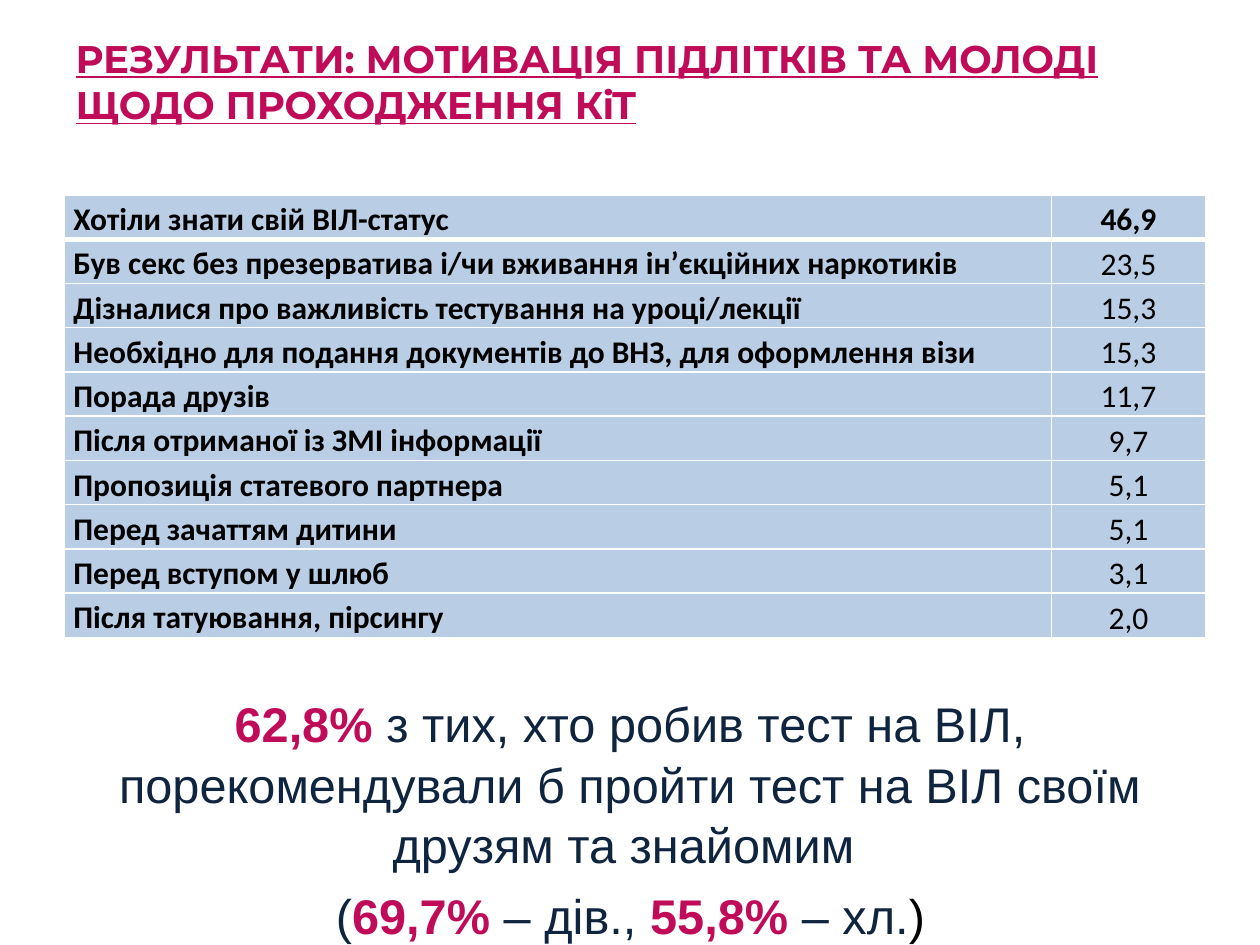
from lxml import etree
from pptx import Presentation
from pptx.dml.color import RGBColor
from pptx.enum import text
from pptx.oxml import ns
from pptx.util import Cm, Pt

PINK, NAVY, BLACK, WHITE, BLUE = "BF0B58", "0F243E", "000000", "FFFFFF", "B9CDE5"

TITLE = "РЕЗУЛЬТАТИ: МОТИВАЦІЯ ПІДЛІТКІВ ТА МОЛОДІ ЩОДО ПРОХОДЖЕННЯ КіТ"
MOTIVES = [
    ("Хотіли знати свій ВІЛ-статус", "46,9"),
    ("Був секс без презерватива і/чи вживання ін’єкційних наркотиків", "23,5"),
    ("Дізналися про важливість тестування на уроці/лекції", "15,3"),
    ("Необхідно для подання документів до ВНЗ, для оформлення візи", "15,3"),
    ("Порада друзів", "11,7"),
    ("Після отриманої із ЗМІ інформації", "9,7"),
    ("Пропозиція статевого партнера", "5,1"),
    ("Перед зачаттям дитини", "5,1"),
    ("Перед вступом у шлюб", "3,1"),
    ("Після татуювання, пірсингу", "2,0"),
]
SUMMARY = [
    [("62,8% ", PINK),
     ("з тих, хто робив тест на ВІЛ, порекомендували б пройти тест на ВІЛ "
      "своїм друзям та знайомим ", NAVY)],
    [("(", NAVY), ("69,7%", PINK), (" – дів., ", NAVY), ("55,8%", PINK),
     (" – хл.", NAVY), (")", BLACK)],
]
COLUMNS = [Cm(19.9), Cm(3.1)]
ROW = Cm(0.89)


def rgb(color):
    return RGBColor.from_string(color)


def add_run(p, words, font, size, color, bold=False):
    r = p.add_run()
    r.text = words
    r.font.name, r.font.size, r.font.bold = font, Pt(size), bold
    r.font.color.rgb = rgb(color)
    return r


def set_borders(cell, widths):
    """Draw white cell borders; widths maps a side (L, R, T, B) to points."""
    tcPr = cell._tc.get_or_add_tcPr()
    for i, (side, width) in enumerate(widths.items()):
        ln = etree.Element(ns.qn("a:ln" + side), w=str(Pt(width)))
        fill = etree.SubElement(ln, ns.qn("a:solidFill"))
        etree.SubElement(fill, ns.qn("a:srgbClr"), val=WHITE)
        tcPr.insert(i, ln)


def add_title(s):
    title = s.shapes.title
    title.left, title.top, title.width, title.height = Cm(1.27), Cm(0.76), Cm(22.86), Cm(1.75)
    tf = title.text_frame
    tf.word_wrap = True
    tf.auto_size = text.MSO_AUTO_SIZE.NONE
    tf.vertical_anchor = text.MSO_ANCHOR.MIDDLE
    p = tf.paragraphs[0]
    p.alignment = text.PP_ALIGN.LEFT
    add_run(p, TITLE, "Montserrat", 22, PINK, True).font.underline = True


def add_motives(s):
    table = s.shapes.add_table(len(MOTIVES), len(COLUMNS), Cm(1.3), Cm(3.93),
                               sum(COLUMNS), ROW * len(MOTIVES)).table
    for column, width in zip(table.columns, COLUMNS):
        column.width = width
    for i, motive in enumerate(MOTIVES):
        table.rows[i].height = ROW
        for j, words in enumerate(motive):
            cell = table.cell(i, j)
            cell.fill.solid()
            cell.fill.fore_color.rgb = rgb(BLUE)
            cell.margin_left = cell.margin_right = Cm(0.18)
            cell.margin_top = cell.margin_bottom = 0
            cell.vertical_anchor = text.MSO_ANCHOR.MIDDLE if j else text.MSO_ANCHOR.TOP
            set_borders(cell, {"L": 1, "R": 1, "T": 3 if i == 1 else 1, "B": 1 if i else 3})
            p = cell.text_frame.paragraphs[0]
            p.line_spacing = 1.15
            p.alignment = text.PP_ALIGN.CENTER if j else text.PP_ALIGN.LEFT
            add_run(p, words, "Calibri", 18, BLACK, i == 0 or j == 0)


def add_summary(s):
    tf = s.shapes.add_textbox(Cm(0.71), Cm(13.34), Cm(24), Cm(4.8)).text_frame
    tf.word_wrap = True
    tf.margin_top = Cm(0.6)
    tf.margin_left = tf.margin_right = Cm(0.6)
    for i, runs in enumerate(SUMMARY):
        p = tf.add_paragraph() if i else tf.paragraphs[0]
        p.alignment = text.PP_ALIGN.CENTER
        p.line_spacing = 1.04
        p.space_before = Pt(5.6 if i else 0)
        for words, color in runs:
            add_run(p, words, "Arial", 27.8, color, color == PINK)


prs = Presentation()
prs.slide_width, prs.slide_height = Cm(25.4), Cm(19.05)
s = prs.slides.add_slide(prs.slide_layouts[5])
add_title(s)
add_motives(s)
add_summary(s)
prs.save("out.pptx")
